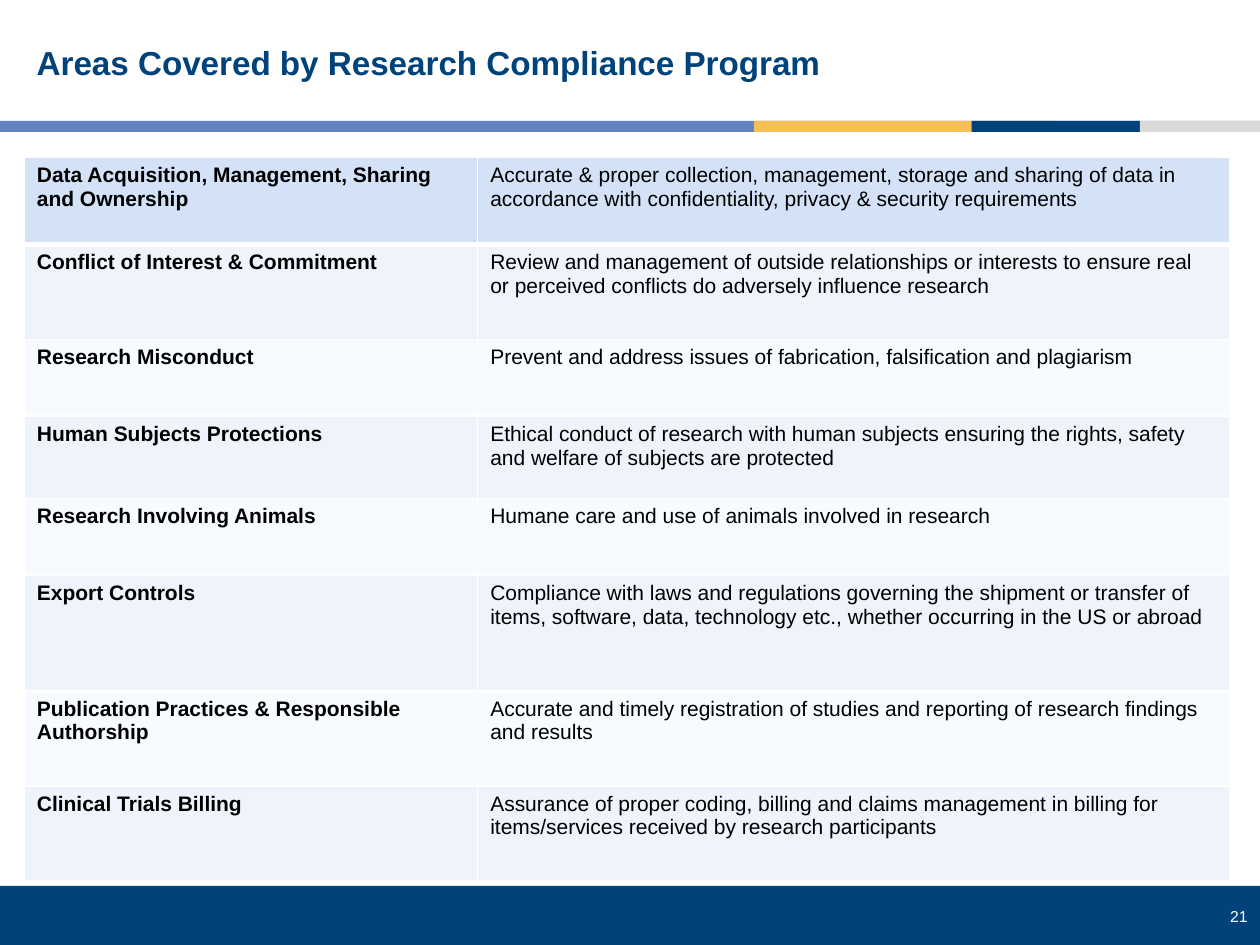
from lxml.etree import SubElement as Sub
from pptx import Presentation
from pptx.dml.color import RGBColor as Rgb
from pptx.enum.shapes import MSO_SHAPE as Kind
from pptx.enum.text import MSO_ANCHOR as Anchor, PP_ALIGN as Align
from pptx.oxml.ns import qn
from pptx.util import Cm, Pt

# Content
TITLE = "Areas Covered by Research Compliance Program"
PAGE = "21"
AREAS = [  # area, scope, row height in cm
    ("Data Acquisition, Management, Sharing and Ownership",
     "Accurate & proper collection, management, storage and sharing of data in "
     "accordance with confidentiality, privacy & security requirements", 1.76),
    ("Conflict of Interest & Commitment",
     "Review and management of outside relationships or interests to ensure real "
     "or perceived conflicts do adversely influence research", 1.91),
    ("Research Misconduct",
     "Prevent and address issues of fabrication, falsification and plagiarism", 1.55),
    ("Human Subjects Protections",
     "Ethical conduct of research with human subjects ensuring the rights, safety "
     "and welfare of subjects are protected", 1.66),
    ("Research Involving Animals",
     "Humane care and use of animals involved in research", 1.55),
    ("Export Controls",
     "Compliance with laws and regulations governing the shipment or transfer of "
     "items, software, data, technology etc., whether occurring in the US or abroad", 2.33),
    ("Publication Practices & Responsible Authorship",
     "Accurate and timely registration of studies and reporting of research findings "
     "and results", 1.91),
    ("Clinical Trials Billing",
     "Assurance of proper coding, billing and claims management in billing for "
     "items/services received by research participants", 1.91),
]
HEX = {"navy": "00437B", "blue": "6283C2", "gold": "F8BF56", "gray": "D9D9D9",
       "white": "FFFFFF", "black": "000000",
       "head": "D4E2F8", "odd": "EFF4FC", "even": "F7FAFE"}
WIDE, HIGH = 25.4, 19.05
COLS = (9.14, 15.16)
BARS = [  # colour, left, top, width, height in cm
    ("navy", 0, 17.86, WIDE, 1.19),
    ("blue", 0, 2.44, WIDE, 0.22),
    ("gold", 15.2, 2.44, 6.1, 0.22),
    ("navy", 19.59, 2.44, 3.4, 0.22),
    ("gray", 22.98, 2.44, 2.42, 0.22),
]
FONTS = {
    "title": {"size": Pt(19), "bold": True, "name": "Arial"},
    "page": {"size": Pt(9), "bold": False, "name": "Arial"},
    "area": {"size": Pt(12), "bold": True, "name": "Arial"},
    "scope": {"size": Pt(12), "bold": False, "name": "Arial"},
}


def color(name):
    return Rgb.from_string(HEX[name])


def write(frame, text, style, tint):
    para = frame.paragraphs[0]
    run = para.add_run()
    run.text = text
    for key, val in FONTS[style].items():
        setattr(run.font, key, val)
    run.font.color.rgb = color(tint)
    return para


def label(slide, box, text, style, tint, **form):
    frame = slide.shapes.add_textbox(*map(Cm, box)).text_frame
    frame.word_wrap = True
    frame.vertical_anchor = form.pop("anchor", Anchor.TOP)
    para = write(frame, text, style, tint)
    for key, val in form.items():
        setattr(para, key, val)


def edge(cell, **sizes):
    props = cell._tc.get_or_add_tcPr()
    for side in "LRTB":
        line = Sub(props, qn(f"a:ln{side}"), w=str(Pt(sizes.get(side, 1))))
        Sub(Sub(line, qn("a:solidFill")), qn("a:srgbClr"), val=HEX["white"])


deck = Presentation()
deck.slide_width, deck.slide_height = Cm(WIDE), Cm(HIGH)
slide = deck.slides.add_slide(deck.slide_layouts[6])

# Footer band and colour stripe
for tint, *box in BARS:
    bar = slide.shapes.add_shape(Kind.RECTANGLE, *map(Cm, box))
    bar.shadow.inherit = False
    bar.fill.solid()
    bar.fill.fore_color.rgb = color(tint)
    bar.line.fill.background()

# Title and page number
label(slide, (0.49, 0.43, 24.3, 1.75), TITLE, "title", "navy",
      anchor=Anchor.MIDDLE, line_spacing=0.9)
label(slide, (23.65, 18.16, 1.75, 0.64), PAGE, "page", "white",
      alignment=Align.RIGHT)

# Table of areas
high = sum(area[-1] for area in AREAS)
grid = slide.shapes.add_table(len(AREAS), len(COLS), Cm(0.49), Cm(3.17),
                              Cm(sum(COLS)), Cm(high)).table
for col, wide in zip(grid.columns, COLS):
    col.width = Cm(wide)
for r, (*texts, tall) in enumerate(AREAS):
    grid.rows[r].height = Cm(tall)
    band = "head" if r == 0 else "odd" if r % 2 else "even"
    heavy = {0: {"B": 3}, 1: {"T": 3}}.get(r, {})
    for c, (text, style) in enumerate(zip(texts, ("area", "scope"))):
        cell = grid.cell(r, c)
        edge(cell, **heavy)
        cell.fill.solid()
        cell.fill.fore_color.rgb = color(band)
        write(cell.text_frame, text, style, "black")

deck.save("out.pptx")
